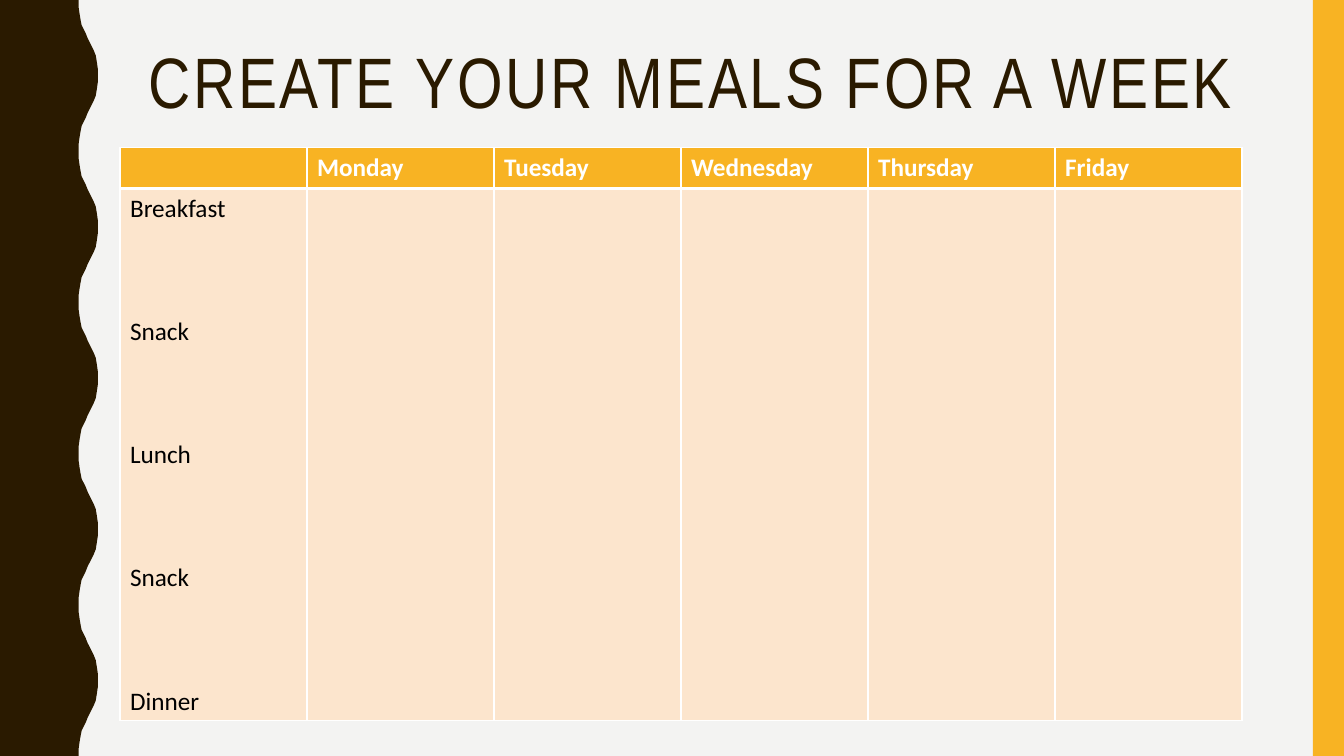
from lxml.etree import SubElement
from pptx import Presentation
from pptx.dml.color import RGBColor
from pptx.enum.shapes import MSO_SHAPE
from pptx.enum.text import MSO_ANCHOR
from pptx.oxml.ns import qn
from pptx.util import Inches, Pt

WIDTH, HEIGHT = 13.33, 7.5
BROWN, GOLD, PEACH, WHITE = "2A1A00", "F8B323", "FCE5CD", "FFFFFF"
DAYS = ["Monday", "Tuesday", "Wednesday", "Thursday", "Friday"]
MEALS = ["Breakfast", "Snack", "Lunch", "Snack", "Dinner"]
HEADER_HEIGHT = 0.41
WAVE_PERIOD = 1.5
# Trough to crest of one wave, as (x, y)
HALF_WAVE = [(0.78, 0), (0.78, 0.07), (0.79, 0.14), (0.8, 0.2), (0.81, 0.25),
             (0.83, 0.29), (0.85, 0.33), (0.87, 0.38), (0.89, 0.42), (0.91, 0.46),
             (0.93, 0.5), (0.95, 0.55), (0.96, 0.61), (0.97, 0.68), (0.97, 0.75)]


def color(value):
    return RGBColor.from_string(value)


def paint(shape, value):
    shape.shadow.inherit = False
    shape.fill.solid()
    shape.fill.fore_color.rgb = color(value)
    shape.line.fill.background()


def add_span(para, text, font, size, value, bold=False):
    span = para.add_run()
    span.text = text
    span.font.name = font
    span.font.size = Pt(size)
    span.font.bold = bold
    span.font.color.rgb = color(value)
    return span


def add_wavy_edge(page, height):
    falling = [(x, WAVE_PERIOD - y) for x, y in reversed(HALF_WAVE[:-1])]
    wave = HALF_WAVE + falling
    points = [(x, y + WAVE_PERIOD * turn)
              for turn in range(round(height / WAVE_PERIOD)) for x, y in wave]
    builder = page.shapes.build_freeform(0, 0, scale=1.0)
    builder.add_line_segments([(Inches(x), Inches(y)) for x, y in points + [(0, height)]])
    paint(builder.convert_to_shape(), BROWN)


def add_side_bar(page, left, top, width, height):
    bar = page.shapes.add_shape(MSO_SHAPE.RECTANGLE, Inches(left), Inches(top),
                                Inches(width), Inches(height))
    paint(bar, GOLD)


def add_title(page, left, top, width, height):
    box = page.shapes.add_textbox(Inches(left), Inches(top), Inches(width), Inches(height))
    box.text_frame.word_wrap = True
    box.text_frame.vertical_anchor = MSO_ANCHOR.TOP
    para = box.text_frame.paragraphs[0]
    para.line_spacing = 0.9
    span = add_span(para, "CREATE YOUR MEALS FOR A WEEK", "Arial Narrow", 51, BROWN)
    span.font._element.set("spc", "200")


def style_cell(cell, value, top, bottom):
    """Fill a cell and rule it in white; top and bottom are line widths in points."""
    properties = cell._tc.get_or_add_tcPr()
    for side, points in (("L", 1), ("R", 1), ("T", top), ("B", bottom)):
        line = SubElement(properties, qn(f"a:ln{side}"), w=str(Pt(points)))
        fill = SubElement(line, qn("a:solidFill"))
        SubElement(fill, qn("a:srgbClr"), val=WHITE)
    cell.fill.solid()
    cell.fill.fore_color.rgb = color(value)


def add_meal_table(page, left, top, width, height):
    columns = len(DAYS) + 1
    table = page.shapes.add_table(2, columns, Inches(left), Inches(top),
                                  Inches(width), Inches(height)).table
    table.rows[0].height = Inches(HEADER_HEIGHT)
    table.rows[1].height = Inches(height - HEADER_HEIGHT)
    for index in range(columns):
        style_cell(table.cell(0, index), GOLD, 1, 3)
        style_cell(table.cell(1, index), PEACH, 3, 1)
    for index, day in enumerate(DAYS, 1):
        para = table.cell(0, index).text_frame.paragraphs[0]
        add_span(para, day, "Calibri", 18, WHITE, bold=True)
    frame = table.cell(1, 0).text_frame
    for index, meal in enumerate(MEALS):
        para = frame.add_paragraph() if index else frame.paragraphs[0]
        para.space_before = Pt(66 if index else 0)
        add_span(para, meal, "Calibri", 18, "000000")


def build_meal_slide(deck):
    page = deck.slides.add_slide(deck.slide_layouts[6])
    page.background.fill.solid()
    page.background.fill.fore_color.rgb = color("F3F3F2")
    add_wavy_edge(page, HEIGHT)
    add_side_bar(page, WIDTH - 0.31, 0, 0.31, HEIGHT)
    add_title(page, 1.37, 0.42, 11.13, 1.63)
    add_meal_table(page, 1.19, 1.46, 11.13, 5.69)


def main():
    deck = Presentation()
    deck.slide_width, deck.slide_height = Inches(WIDTH), Inches(HEIGHT)
    build_meal_slide(deck)
    deck.save("out.pptx")


if __name__ == "__main__":
    main()
